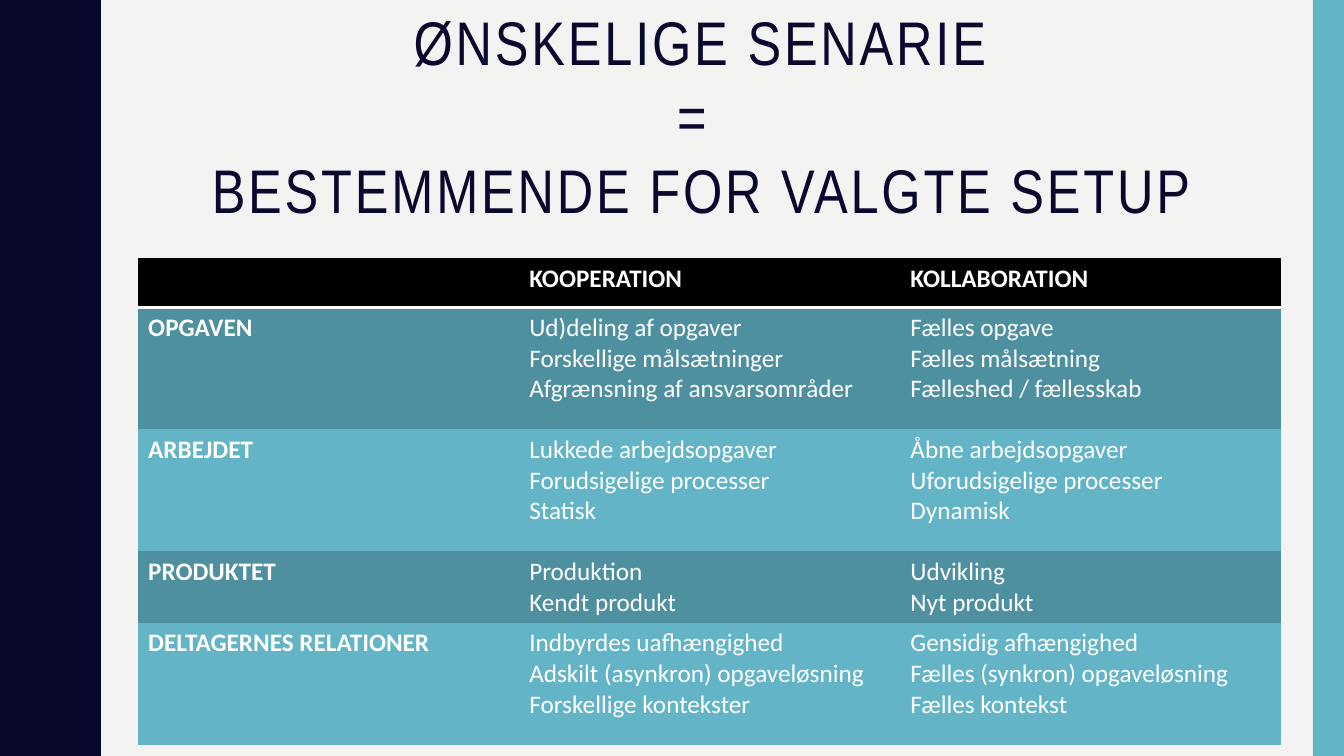
"""Build a slide comparing cooperation and collaboration."""
import dataclasses

import lxml.etree
import pptx
import pptx.dml.color
import pptx.enum.text
import pptx.oxml.ns
import pptx.util

Inches = pptx.util.Inches
Pt = pptx.util.Pt
qn = pptx.oxml.ns.qn


@dataclasses.dataclass(frozen=True)
class Theme:
    """Colours, fonts and type sizes."""
    paper: str = "F3F3F2"
    navy: str = "0B082E"
    aqua: str = "62B4C6"
    teal: str = "4E909F"
    black: str = "000000"
    white: str = "FFFFFF"
    head: str = "Arial Narrow"
    body: str = "Calibri"
    large: int = 44
    small: int = 18


THEME = Theme()
NO_STYLE = "{2D5ABB26-0587-4C30-8999-92F81FD0307C}"
TITLE = "ØNSKELIGE SENARIE\v= \vBESTEMMENDE FOR VALGTE SETUP"
HEADS = ["", "KOOPERATION", "KOLLABORATION"]
ROWS = [
    ("OPGAVEN",
     "Ud)deling af opgaver\nForskellige målsætninger Afgrænsning af ansvarsområder",
     "Fælles opgave\nFælles målsætning\nFælleshed / fællesskab"),
    ("ARBEJDET",
     "Lukkede arbejdsopgaver Forudsigelige processer\nStatisk",
     "Åbne arbejdsopgaver Uforudsigelige processer\nDynamisk"),
    ("PRODUKTET",
     "Produktion\nKendt produkt",
     "Udvikling\nNyt produkt"),
    ("DELTAGERNES RELATIONER",
     "Indbyrdes uafhængighed\nAdskilt (asynkron) opgaveløsning Forskellige kontekster",
     "Gensidig afhængighed\nFælles (synkron) opgaveløsning Fælles kontekst"),
]
HEIGHTS = [0.49, 1.21, 1.21, 0.67, 1.21]
CURVE = [(0.78, 0), (0.78, 0.07), (0.79, 0.14), (0.8, 0.2), (0.81, 0.25),
         (0.83, 0.29), (0.85, 0.33), (0.87, 0.38), (0.89, 0.42),
         (0.91, 0.46), (0.93, 0.5), (0.95, 0.55), (0.96, 0.61),
         (0.97, 0.68), (0.97, 0.75)]
PERIOD = 1.5


def assign(item, values):
    """Set each named attribute of an item."""
    for name, value in values.items():
        setattr(item, name, value)


def paint(fill, color):
    """Give a fill one solid colour."""
    fill.solid()
    fill.fore_color.rgb = pptx.dml.color.RGBColor.from_string(color)


def style(font, color, **values):
    """Format a font."""
    assign(font, values)
    paint(font.fill, color)


def finish(shape, color):
    """Leave a shape with a plain fill only."""
    shape.shadow.inherit = False
    paint(shape.fill, color)
    shape.line.fill.background()


def wave(slide, box):
    """Draw the wavy band down the left edge."""
    left, top, _, height = box
    cycle = CURVE + [(x, PERIOD - y) for x, y in CURVE[-2::-1]]
    edge = [(left + x, top + y + turn * PERIOD)
            for turn in range(round(height / PERIOD)) for x, y in cycle]
    pen = slide.shapes.build_freeform(left, top, scale=Inches(1))
    pen.add_line_segments(edge + [(left, top + height)], close=True)
    finish(pen.convert_to_shape(), THEME.navy)


def strip(slide, box):
    """Draw the bar down the right edge."""
    kind = pptx.enum.shapes.MSO_SHAPE.RECTANGLE
    finish(slide.shapes.add_shape(kind, *map(Inches, box)), THEME.aqua)


def title(slide, box):
    """Place the three-line title."""
    shape = slide.shapes.title
    assign(shape, dict(zip(("left", "top", "width", "height"),
                           map(Inches, box))))
    frame = shape.text_frame
    frame.text = TITLE
    assign(frame, {"word_wrap": True,
                   "auto_size": pptx.enum.text.MSO_AUTO_SIZE.NONE,
                   "vertical_anchor": pptx.enum.text.MSO_ANCHOR.MIDDLE})
    para = frame.paragraphs[0]
    para.alignment = pptx.enum.text.PP_ALIGN.CENTER
    style(para.font, THEME.navy, name=THEME.head, size=Pt(THEME.large))
    for run in para.runs:
        style(run.font, THEME.navy, name=THEME.head, size=Pt(THEME.large))
        run._r.get_or_add_rPr().set("spc", "200")


def rule(cell):
    """Draw a white line under a cell."""
    line = lxml.etree.Element(qn("a:lnB"), w=str(Pt(2)))
    fill = lxml.etree.SubElement(line, qn("a:solidFill"))
    lxml.etree.SubElement(fill, qn("a:srgbClr"), val=THEME.white)
    cell._tc.get_or_add_tcPr().insert(0, line)


def write(cell, text, color, bold):
    """Fill one table cell."""
    paint(cell.fill, color)
    cell.text = text
    for para in cell.text_frame.paragraphs:
        for font in [para.font] + [run.font for run in para.runs]:
            style(font, THEME.white, name=THEME.body,
                  size=Pt(THEME.small), bold=bold)


def grid(slide, box):
    """Place the comparison table."""
    data = [HEADS] + ROWS
    table = slide.shapes.add_table(len(data), len(HEADS),
                                   *map(Inches, box)).table
    assign(table, {"first_row": True, "horz_banding": False})
    table._tbl.tblPr.find(qn("a:tableStyleId")).text = NO_STYLE
    for col in table.columns:
        col.width = Inches(box[2] / len(HEADS))
    for r, (texts, height) in enumerate(zip(data, HEIGHTS)):
        table.rows[r].height = Inches(height)
        color = (THEME.aqua, THEME.teal)[r % 2] if r else THEME.black
        for c, text in enumerate(texts):
            cell = table.cell(r, c)
            write(cell, text, color, r == 0 or c == 0)
            if r == 0:
                rule(cell)


def main():
    """Build and save the slide."""
    deck = pptx.Presentation()
    assign(deck, {"slide_width": Inches(13.33), "slide_height": Inches(7.5)})
    slide = deck.slides.add_slide(deck.slide_layouts[5])
    paint(slide.background.fill, THEME.paper)
    wave(slide, (0, 0, 0.97, 7.5))
    strip(slide, (13.02, 0, 0.31, 7.5))
    title(slide, (1.37, -0.02, 11.18, 2.32))
    grid(slide, (1.37, 2.56, 11.34, 4.83))
    deck.save("out.pptx")


if __name__ == "__main__":
    main()
